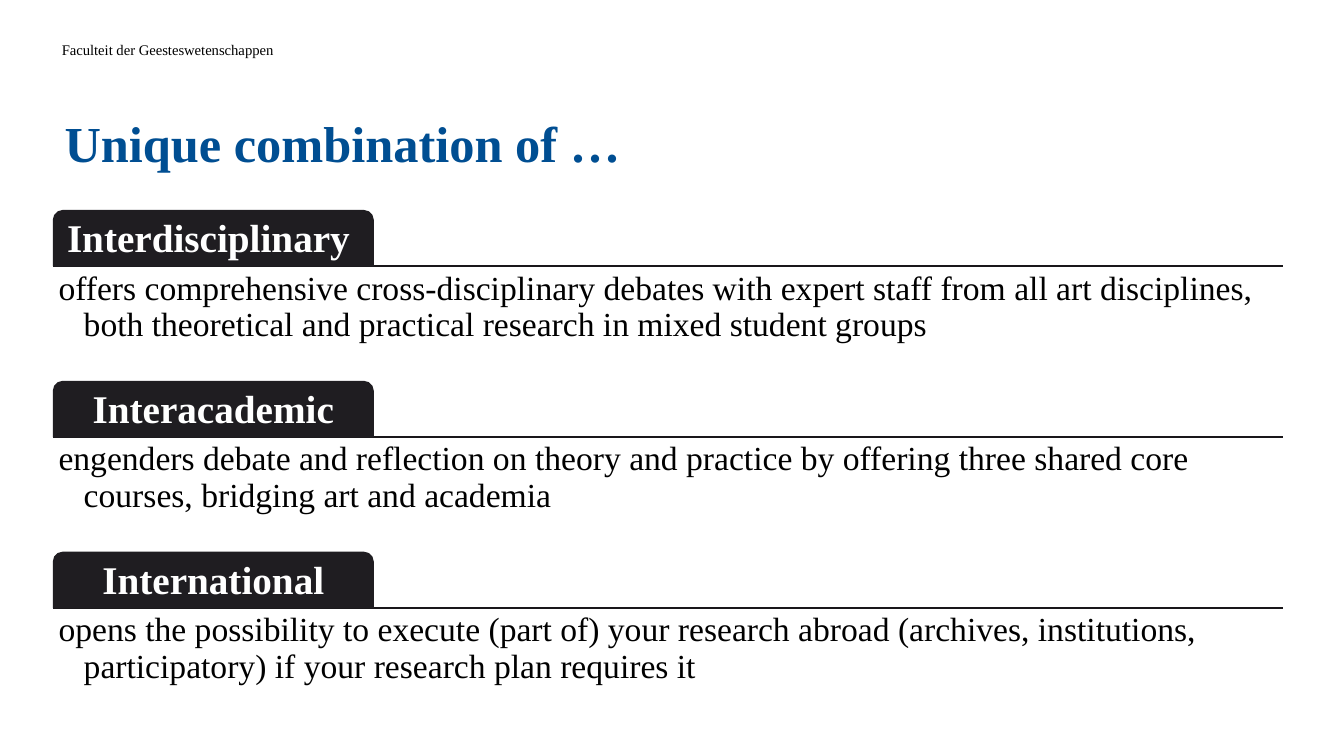
from lxml import etree
from pptx import Presentation, util as u
from pptx.dml.color import RGBColor
from pptx.enum import shapes, text
from pptx.oxml.ns import qn

BLACK = RGBColor(0x00, 0x00, 0x00)
WHITE = RGBColor(0xFF, 0xFF, 0xFF)
TITLE_BLUE = RGBColor(0x00, 0x4E, 0x92)
TAB_FILL = RGBColor(0x1F, 0x1D, 0x21)
RULE = RGBColor(0x19, 0x17, 0x1A)

# Percentages of the slide's width or height
LEFT, WIDTH = 3.98, 91.5
TAB_WIDTH, TAB_HEIGHT = 23.78, 7.33
FIRST_RULE, PITCH, BODY_HEIGHT = 35.2, 22.6, 14.8

STRENGTHS = [
    ("Interdisciplinary ",
     "offers comprehensive cross-disciplinary debates with expert staff from all art "
     "disciplines, both theoretical and practical research in mixed student groups"),
    ("Interacademic",
     "engenders debate and reflection on theory and practice by offering three shared "
     "core courses, bridging art and academia"),
    ("International",
     "opens the possibility to execute (part of) your research abroad (archives, "
     "institutions, participatory) if your research plan requires it"),
]


class SlideBuilder:
    """Holds the deck, its slide and the typeface; lengths are percentages of the slide."""

    def __init__(self, typeface):
        self.typeface = typeface
        self.deck = Presentation()
        self.deck.slide_width, self.deck.slide_height = u.Inches(13.33), u.Inches(7.5)
        self.slide = self.deck.slides.add_slide(self.deck.slide_layouts[5])

    def x(self, share):
        return round(self.deck.slide_width * share / 100)

    def y(self, share):
        return round(self.deck.slide_height * share / 100)

    def area(self, left, top, width, height):
        return self.x(left), self.y(top), self.x(width), self.y(height)

    def set_text(self, shape, words, size, color, bold=False, align=text.PP_ALIGN.LEFT,
                 anchor=text.MSO_ANCHOR.TOP, insets=(0.1, 0.05, 0.1, 0.05), spacing=None):
        """Fills a shape with one paragraph; insets are left, top, right, bottom in inches."""
        frame = shape.text_frame
        frame.word_wrap = True
        frame.auto_size = text.MSO_AUTO_SIZE.NONE
        frame.vertical_anchor = anchor
        (frame.margin_left, frame.margin_top,
         frame.margin_right, frame.margin_bottom) = map(u.Inches, insets)
        paragraph = frame.paragraphs[0]
        paragraph.text = words
        paragraph.alignment = align
        paragraph.line_spacing = spacing
        font = paragraph.font
        font.name, font.size, font.bold = self.typeface, u.Pt(size), bold
        font.color.rgb = color
        return paragraph

    def title(self, words, *area):
        title = self.slide.shapes.title
        title.left, title.top, title.width, title.height = self.area(*area)
        self.set_text(title, words, 36, TITLE_BLUE, bold=True,
                      anchor=text.MSO_ANCHOR.BOTTOM)

    def label(self, words, size, area, **style):
        box = self.slide.shapes.add_textbox(*self.area(*area))
        return self.set_text(box, words, size, BLACK, **style)

    def rule(self, left, top, width):
        line = self.slide.shapes.add_connector(
            shapes.MSO_CONNECTOR.STRAIGHT,
            self.x(left), self.y(top), self.x(left + width), self.y(top))
        line.line.color.rgb, line.line.width = RULE, u.Pt(1)
        etree.SubElement(line._element.spPr, qn("a:effectLst"))

    def tab(self, words, *area):
        tab = self.slide.shapes.add_shape(
            shapes.MSO_SHAPE.ROUND_2_SAME_RECTANGLE, *self.area(*area))
        tab.shadow.inherit = False
        tab.fill.solid()
        tab.fill.fore_color.rgb = tab.line.color.rgb = TAB_FILL
        tab.line.width = u.Pt(1)
        self.set_text(tab, words, 28, WHITE, bold=True, align=text.PP_ALIGN.CENTER,
                      anchor=text.MSO_ANCHOR.MIDDLE, insets=[0.06] * 4, spacing=0.9)

    def body(self, words, *area):
        paragraph = self.label(words, 24, area, insets=[0.05] * 4, spacing=0.9)
        hanging = paragraph._p.get_or_add_pPr()
        hanging.set("marL", str(u.Inches(0.25)))
        hanging.set("indent", str(u.Inches(-0.25)))

    def strength(self, heading, explanation, rule_top):
        """Draws a tab standing on a rule, with its explanation below."""
        self.rule(LEFT, rule_top, WIDTH)
        self.tab(heading, LEFT, rule_top - TAB_HEIGHT, TAB_WIDTH, TAB_HEIGHT)
        self.body(explanation, LEFT, rule_top, WIDTH, BODY_HEIGHT)


def main():
    builder = SlideBuilder("Times New Roman")
    builder.label("Faculteit der Geesteswetenschappen", 10.5, (4.6, 4.8, 26.7, 3.9),
                  insets=(0, 0.05, 0.1, 0.05))
    builder.title("Unique combination of …", 4.05, 9.87, WIDTH, 13.6)
    for row, (heading, explanation) in enumerate(STRENGTHS):
        builder.strength(heading, explanation, FIRST_RULE + row * PITCH)
    builder.deck.save("out.pptx")


if __name__ == "__main__":
    main()
